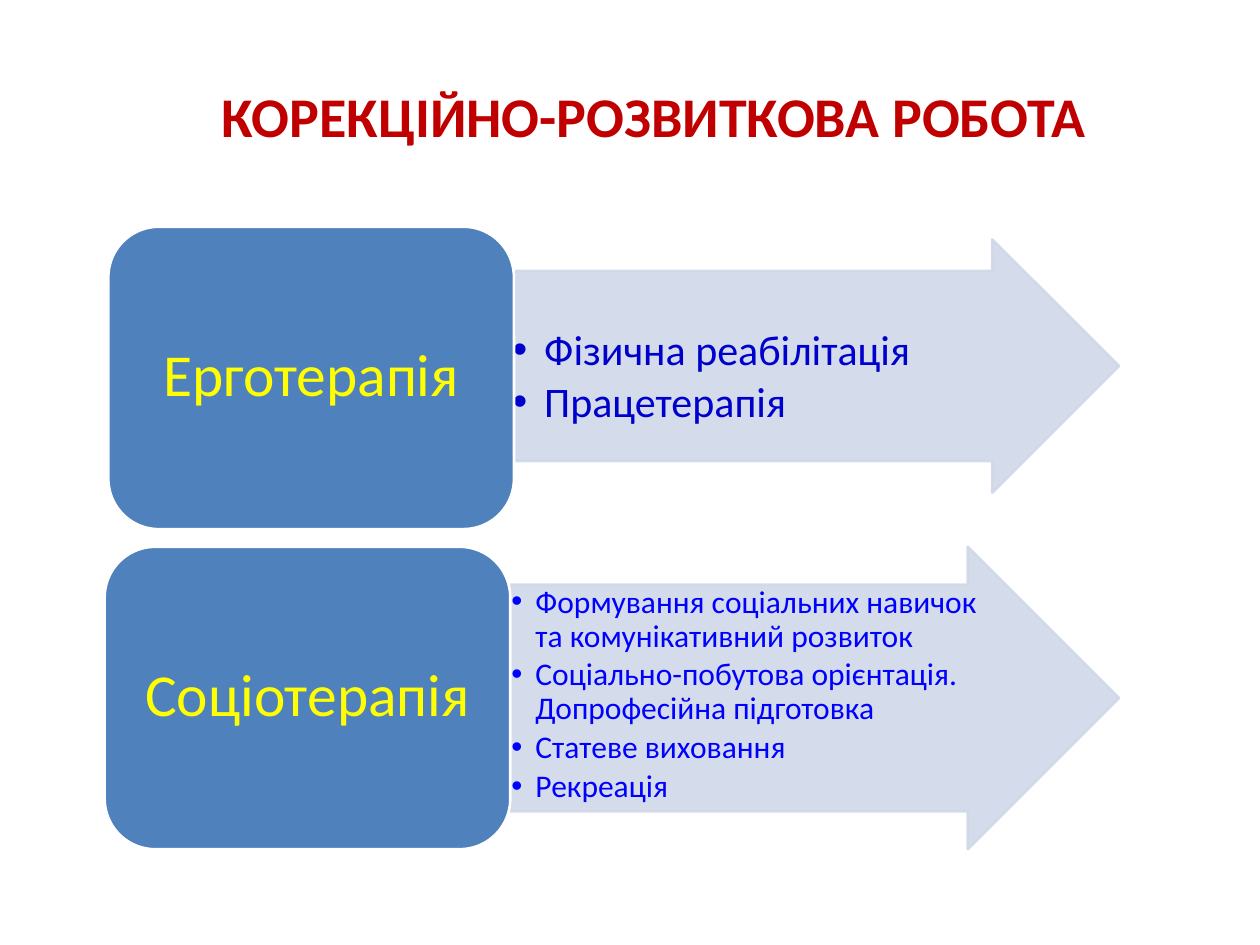
import pptx
import pptx.util
import pptx.dml.color
import pptx.enum.shapes
import pptx.enum.text
import pptx.oxml.ns
import lxml.etree
from dataclasses import dataclass

Pt = pptx.util.Pt
Shape = pptx.enum.shapes.MSO_SHAPE
Align = pptx.enum.text.PP_ALIGN
Anchor = pptx.enum.text.MSO_ANCHOR


@dataclass(frozen=True)
class Theme:
    font: str = "Calibri"
    title: str = "C00000"
    block: str = "4F81BD"
    block_line: str = "FFFFFF"
    block_text: str = "FFFF00"
    arrow: str = "D0D8E8"
    arrow_opacity: int = 90
    first_list: str = "0000CC"
    second_list: str = "0000FF"
    title_size: int = 32
    block_size: int = 34
    first_list_size: int = 24
    second_list_size: int = 18
    line_width: float = 1.5


class SlideBuilder:
    def __init__(self, deck, theme):
        self.theme = theme
        self.slide = deck.slides.add_slide(deck.slide_layouts[6])

    def add_element(self, parent, tag, **attributes):
        return lxml.etree.SubElement(parent, pptx.oxml.ns.qn(tag), attributes)

    def frame(self, shape, insets, anchor):
        frame = shape.text_frame
        frame.word_wrap = True
        frame.vertical_anchor = anchor
        frame.margin_left, frame.margin_top, frame.margin_right, frame.margin_bottom = map(Pt, insets)
        return frame

    def span(self, para, text, size, color, bold=False):
        span = para.add_run()
        span.text = text
        span.font.name = self.theme.font
        span.font.size = Pt(size)
        span.font.bold = bold
        span.font.color.rgb = pptx.dml.color.RGBColor.from_string(color)

    def shape(self, kind, place, color, line_color):
        shape = self.slide.shapes.add_shape(kind, *map(Pt, place))
        shape.shadow.inherit = False
        shape.fill.solid()
        shape.fill.fore_color.rgb = pptx.dml.color.RGBColor.from_string(color)
        shape.line.color.rgb = pptx.dml.color.RGBColor.from_string(line_color)
        shape.line.width = Pt(self.theme.line_width)
        return shape

    def title(self, text, place):
        box = self.slide.shapes.add_textbox(*map(Pt, place))
        para = self.frame(box, (14.4, 3.6, 7.2, 3.6), Anchor.TOP).paragraphs[0]
        para.alignment = Align.LEFT
        self.span(para, text, self.theme.title_size, self.theme.title, True)

    def arrow(self, place):
        color = self.theme.arrow
        arrow = self.shape(Shape.RIGHT_ARROW, place, color, color)
        arrow.adjustments[0] = 0.75
        arrow.adjustments[1] = 0.5
        for tint in arrow._element.spPr.iter(pptx.oxml.ns.qn("a:srgbClr")):
            self.add_element(tint, "a:alpha", val=str(self.theme.arrow_opacity * 1000))

    def block(self, text, place):
        block = self.shape(Shape.ROUNDED_RECTANGLE, place, self.theme.block, self.theme.block_line)
        para = self.frame(block, (7.2, 4, 7.2, 5), Anchor.MIDDLE).paragraphs[0]
        para.alignment = Align.CENTER
        para.line_spacing = 0.9
        para.space_after = Pt(self.theme.block_size * 0.35)
        self.span(para, text, self.theme.block_size, self.theme.block_text)

    def bullets(self, items, place, size, color, indent, inset):
        box = self.slide.shapes.add_textbox(*map(Pt, place))
        frame = self.frame(box, (inset,) * 4, Anchor.TOP)
        for index, item in enumerate(items):
            para = frame.paragraphs[0] if index == 0 else frame.add_paragraph()
            para.line_spacing = 0.9
            para.space_after = Pt(size * 0.15)
            properties = para._p.get_or_add_pPr()
            properties.set("marL", str(Pt(indent)))
            properties.set("indent", str(-Pt(indent)))
            self.add_element(properties, "a:buFont", typeface="Arial")
            self.add_element(properties, "a:buChar", char="•")
            self.span(para, item, size, color)


def main():
    deck = pptx.Presentation()
    deck.slide_width, deck.slide_height = Pt(720), Pt(540)
    theme = Theme()
    page = SlideBuilder(deck, theme)
    page.title("КОРЕКЦІЙНО-РОЗВИТКОВА РОБОТА", (112.3, 43.2, 556.6, 55.4))

    arrow_left, arrow_width = 291.6, 347.8
    block_width, block_height = 231.8, 172.8

    page.arrow((arrow_left, 136.8, arrow_width, 144.7))
    page.bullets(
        ["Фізична реабілітація", "Працетерапія"],
        (arrow_left, 186.8, 293.8, 76.7), theme.first_list_size, theme.first_list, 18, 1.4)
    page.block("Ерготерапія", (61.9, 129.6, block_width, block_height))

    page.arrow((arrow_left, 312.5, arrow_width, block_height))
    page.bullets(
        ["Формування соціальних навичок та комунікативний розвиток",
         "Соціально-побутова орієнтація. Допрофесійна підготовка",
         "Статеве виховання",
         "Рекреація"],
        (arrow_left, 334.1, 283, 129.6), theme.second_list_size, theme.second_list, 13.7, 0.7)
    page.block("Соціотерапія", (59.8, 312.5, block_width, block_height))

    deck.save("out.pptx")


if __name__ == "__main__":
    main()
